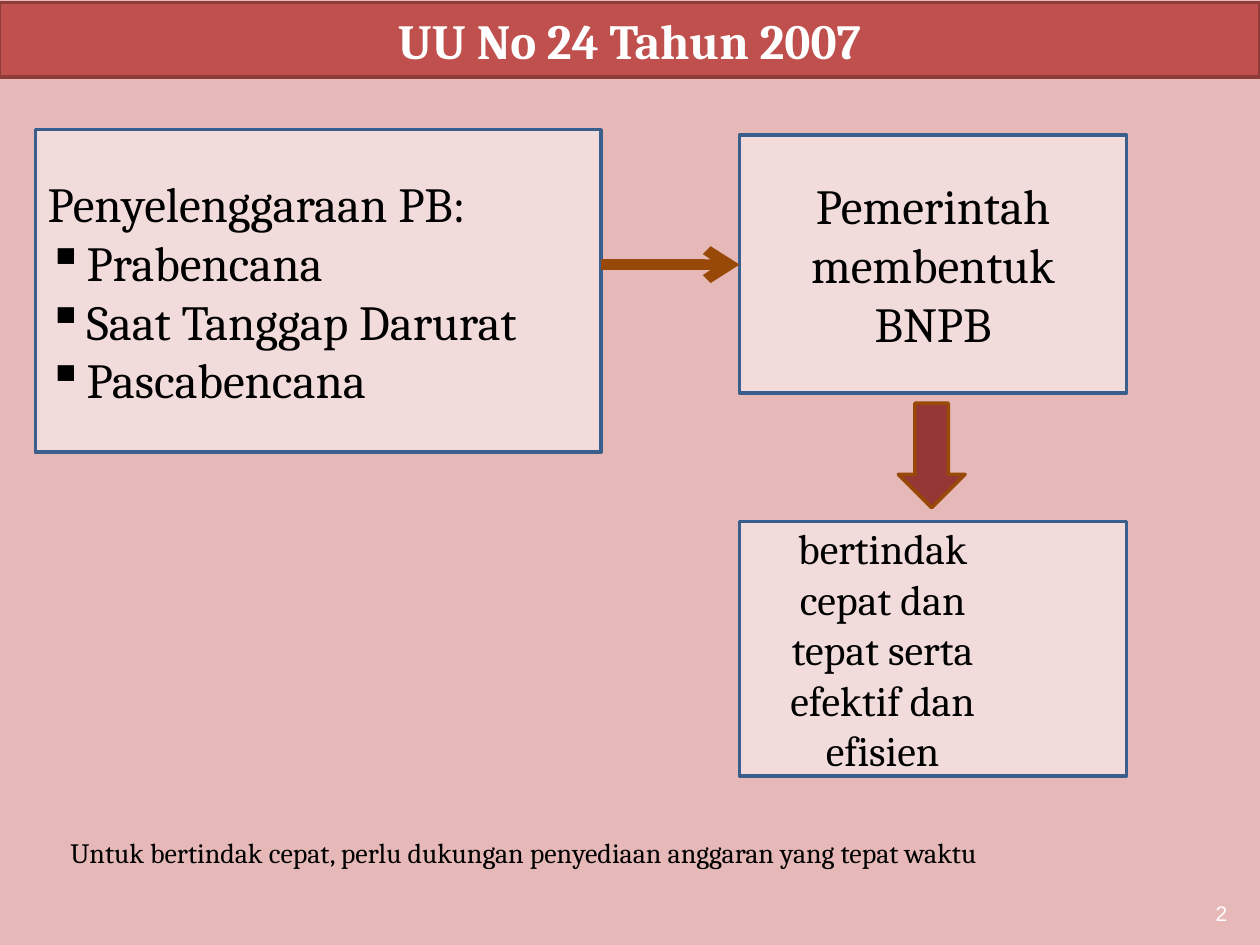
"""Build the slide on Law No. 24 of 2007 and the founding of the disaster agency."""
from dataclasses import dataclass

from lxml.etree import SubElement
from pptx import Presentation
from pptx.dml.color import RGBColor
from pptx.enum.shapes import MSO_CONNECTOR, MSO_SHAPE
from pptx.enum.text import MSO_ANCHOR, PP_ALIGN
from pptx.oxml.ns import qn
from pptx.util import Inches, Pt


@dataclass(frozen=True)
class Theme:
    background: str = "E6B9B8"
    banner: str = "C0504D"
    banner_line: str = "8E3B39"
    card: str = "F2DCDB"
    card_line: str = "3A5F8C"
    arrow: str = "953735"
    arrow_line: str = "984807"
    light: str = "FFFFFF"
    dark: str = "000000"
    serif: str = "Cambria"
    sans: str = "Arial"
    large: int = 28
    medium: int = 24
    small: int = 16
    tiny: int = 12
    outline: int = 2
    connector: int = 6


theme = Theme()
deck = Presentation()
deck.slide_width, deck.slide_height = Inches(10), Inches(7.5)
column, row = deck.slide_width / 100, deck.slide_height / 75
page = deck.slides.add_slide(deck.slide_layouts[6])
page.background.fill.solid()
page.background.fill.fore_color.rgb = RGBColor.from_string(theme.background)


def add_box(area, preset=None, fill=None, line=None, anchor=MSO_ANCHOR.MIDDLE, inset=(1, 0.5)):
    left, top, width, height = area
    place = [int(left * column), int(top * row), int(width * column), int(height * row)]
    if preset is None:
        box = page.shapes.add_textbox(*place)
    else:
        box = page.shapes.add_shape(preset, *place)
        box.shadow.inherit = False
        box.fill.solid()
        box.fill.fore_color.rgb = RGBColor.from_string(fill)
        box.line.color.rgb = RGBColor.from_string(line)
        box.line.width = Pt(theme.outline)
    frame = box.text_frame
    frame.word_wrap = True
    frame.vertical_anchor = anchor
    frame.margin_left = frame.margin_right = int(inset[0] * column)
    frame.margin_top = frame.margin_bottom = int(inset[1] * row)
    return box


def write(box, lines, size, align, color=theme.dark, font=theme.serif, bold=False):
    for index, line in enumerate(lines):
        para = box.text_frame.paragraphs[0] if index == 0 else box.text_frame.add_paragraph()
        para.alignment = align
        span = para.add_run()
        span.text = line
        span.font.size = Pt(size)
        span.font.name = font
        span.font.bold = bold
        span.font.color.rgb = RGBColor.from_string(color)


number = add_box((94.6, 70.1, 4, 4), anchor=MSO_ANCHOR.BOTTOM, inset=(1.2, 0.6))
write(number, ["2"], theme.tiny, PP_ALIGN.RIGHT, theme.light, theme.sans)

banner = add_box((-0.1, 0.2, 100.1, 5.9), MSO_SHAPE.RECTANGLE, theme.banner,
                 theme.banner_line, MSO_ANCHOR.TOP, (1.2, 0.6))
write(banner, ["UU No 24 Tahun 2007"], theme.large, PP_ALIGN.CENTER, theme.light, bold=True)

cards = [
    ((2.8, 10.3, 44.9, 25.6), theme.large, PP_ALIGN.JUSTIFY,
     ["Penyelenggaraan PB:", "Prabencana", "Saat Tanggap Darurat", "Pascabencana"]),
    ((58.7, 10.7, 30.7, 20.5), theme.large, PP_ALIGN.CENTER, ["Pemerintah membentuk BNPB"]),
    ((58.7, 41.4, 30.7, 20.2), theme.medium, PP_ALIGN.CENTER,
     ["bertindak", "cepat dan tepat serta efektif dan efisien"]),
]
boxes = []
for area, size, align, lines in cards:
    card = add_box(area, MSO_SHAPE.RECTANGLE, theme.card, theme.card_line)
    write(card, lines, size, align)
    boxes.append(card)
phases, agency, action = boxes

hanging = int(3.1 * column)
for para in phases.text_frame.paragraphs[1:]:
    properties = para._p.get_or_add_pPr()
    properties.set("marL", str(hanging))
    properties.set("indent", str(-hanging))
    SubElement(properties, qn("a:buChar")).set("char", "▪")
action.text_frame.paragraphs[0]._p.get_or_add_pPr().set("marR", str(int(8 * column)))

level = int(21 * row)
link = page.shapes.add_connector(
    MSO_CONNECTOR.STRAIGHT, phases.left + phases.width, level, agency.left, level)
link.line.color.rgb = RGBColor.from_string(theme.arrow_line)
link.line.width = Pt(theme.connector)
SubElement(link.line._get_or_add_ln(), qn("a:tailEnd")).set("type", "arrow")
SubElement(link._element.spPr, qn("a:effectLst"))

add_box((71.3, 32, 5.3, 8.3), MSO_SHAPE.DOWN_ARROW, theme.arrow, theme.arrow_line)

note = add_box((4.6, 65.8, 85.5, 3.7), anchor=MSO_ANCHOR.TOP)
write(note, ["Untuk bertindak cepat, perlu dukungan penyediaan anggaran yang tepat waktu"],
      theme.small, PP_ALIGN.LEFT)

deck.save("out.pptx")
